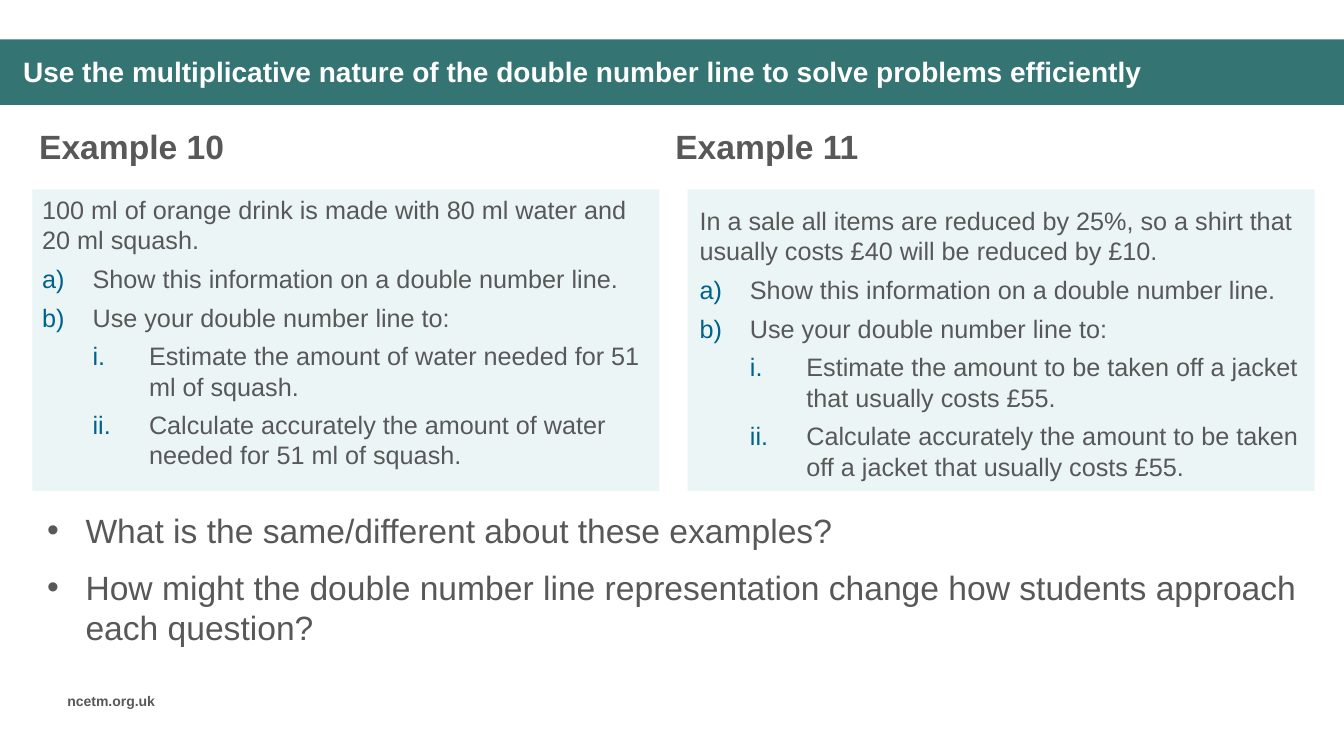
"""Build a slide comparing two double number line examples."""
from dataclasses import dataclass

from lxml.etree import SubElement
from pptx import Presentation
from pptx.dml.color import RGBColor
from pptx.enum.shapes import MSO_SHAPE as Shape
from pptx.enum.text import MSO_ANCHOR as Anchor
from pptx.oxml.ns import qn
from pptx.util import Inches, Pt

TITLE = "Use the multiplicative nature of the double number line to solve problems efficiently"
FOOTER = "ncetm.org.uk"
EXAMPLES = [
    {
        "heading": "Example 10",
        "text_drop": 0,
        "body": [
            ("intro", "100 ml of orange drink is made with 80 ml water and 20 ml squash."),
            ("letter", "Show this information on a double number line."),
            ("letter", "Use your double number line to:"),
            ("roman", "Estimate the amount of water needed for 51 ml of squash."),
            ("roman", "Calculate accurately the amount of water needed for 51 ml of squash."),
        ],
    },
    {
        "heading": "Example 11",
        "text_drop": 0.11,
        "body": [
            ("intro", "In a sale all items are reduced by 25%, so a shirt that usually costs £40 will be reduced by £10."),
            ("letter", "Show this information on a double number line."),
            ("letter", "Use your double number line to:"),
            ("roman", "Estimate the amount to be taken off a jacket that usually costs £55."),
            ("roman", "Calculate accurately the amount to be taken off a jacket that usually costs £55."),
        ],
    },
]
QUESTIONS = [
    ("dot", "What is the same/different about these examples?"),
    ("dot", "How might the double number line representation change how students approach each question?"),
]


@dataclass(frozen=True)
class Theme:
    font: str = "Arial"
    band: str = "347574"
    panel: str = "EBF5F5"
    text: str = "585858"
    marker: str = "00628C"
    light: str = "FFFFFF"
    large: int = 24
    title: int = 20
    body: int = 18
    small: int = 10


THEME = Theme()
WIDTH, HEIGHT = 13.33, 7.5
PANEL_LEFT, PANEL_TOP, PANEL_W, PANEL_H = 0.32, 1.88, 6.22, 2.99
PANEL_STEP, HEADING_LEFT, HEADING_STEP = 6.5, 0.29, 6.31
LISTS = {
    "letter": (0, 0.5, 0.5, "buAutoNum", {"type": "alphaLcParenR"}, THEME.marker),
    "roman": (1, 1.06, 0.56, "buAutoNum", {"type": "romanLcPeriod"}, THEME.marker),
    "dot": (1, 0.52, 0.38, "buChar", {"char": "•"}, THEME.text),
}


def add_marker(p, kind):
    level, left, hang, tag, attrs, color = LISTS[kind]
    p.level = level
    pPr = p._p.get_or_add_pPr()
    pPr.set("marL", str(Inches(left)))
    pPr.set("indent", str(-Inches(hang)))
    SubElement(SubElement(pPr, qn("a:buClr")), qn("a:srgbClr"), val=color)
    SubElement(pPr, qn("a:buFont"), typeface=THEME.font)
    SubElement(pPr, qn(f"a:{tag}"), **attrs)


def add_text(slide, box, lines, size=THEME.body, color=THEME.text, bold=False,
             after=0, spacing=None, anchor=Anchor.TOP):
    tf = slide.shapes.add_textbox(*map(Inches, box)).text_frame
    tf.word_wrap = True
    tf.vertical_anchor = anchor
    for i, (kind, text) in enumerate(lines):
        p = tf.add_paragraph() if i else tf.paragraphs[0]
        if kind in LISTS:
            add_marker(p, kind)
        p.space_after = Pt(after)
        if spacing:
            p.line_spacing = spacing
        r = p.add_run()
        r.text = text
        r.font.name, r.font.size, r.font.bold = THEME.font, Pt(size), bold
        r.font.color.rgb = RGBColor.from_string(color)


def add_block(slide, box, color):
    sp = slide.shapes.add_shape(Shape.RECTANGLE, *map(Inches, box))
    sp.shadow.inherit = False
    sp.fill.solid()
    sp.fill.fore_color.rgb = RGBColor.from_string(color)
    sp.line.fill.background()


def main():
    prs = Presentation()
    prs.slide_width, prs.slide_height = Inches(WIDTH), Inches(HEIGHT)
    slide = prs.slides.add_slide(prs.slide_layouts[6])

    add_block(slide, (0, 0.39, WIDTH, 0.65), THEME.band)
    add_text(slide, (0.13, 0.49, 11.89, 0.47), [("title", TITLE)], size=THEME.title,
             color=THEME.light, bold=True, spacing=0.9, anchor=Anchor.MIDDLE)

    for col, example in enumerate(EXAMPLES):
        left = PANEL_LEFT + col * PANEL_STEP
        add_block(slide, (left, PANEL_TOP, PANEL_W, PANEL_H), THEME.panel)
        add_text(slide, (HEADING_LEFT + col * HEADING_STEP, 1.2, 6.66, 0.5),
                 [("heading", example["heading"])], size=THEME.large, bold=True)
        add_text(slide, (left + col * 0.02, PANEL_TOP + example["text_drop"], PANEL_W - col * 0.05, 2.86),
                 example["body"], after=6)

    add_text(slide, (0.23, 4.98, 12.73, 1.52), QUESTIONS, size=THEME.large,
             after=12, anchor=Anchor.MIDDLE)
    add_text(slide, (0.57, 6.82, 1.21, 0.27), [("footer", FOOTER)], size=THEME.small, bold=True)
    prs.save("out.pptx")


if __name__ == "__main__":
    main()
